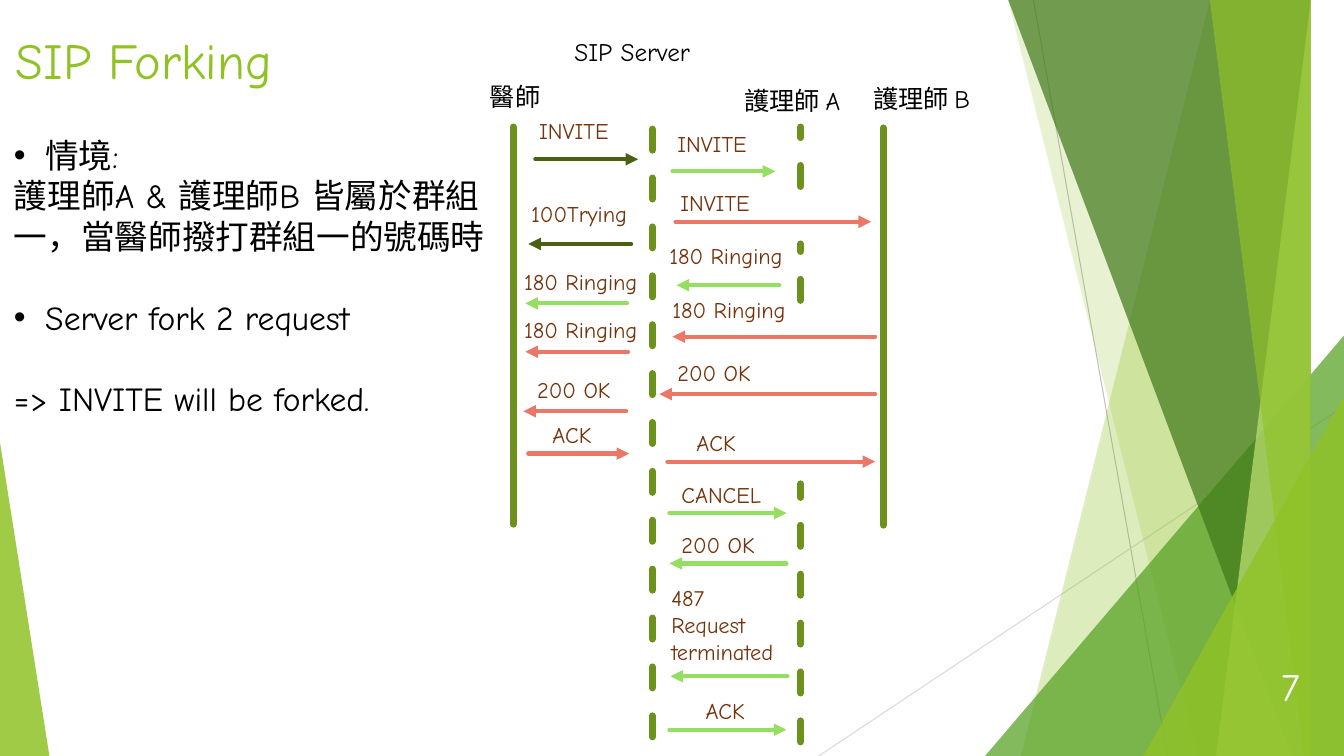
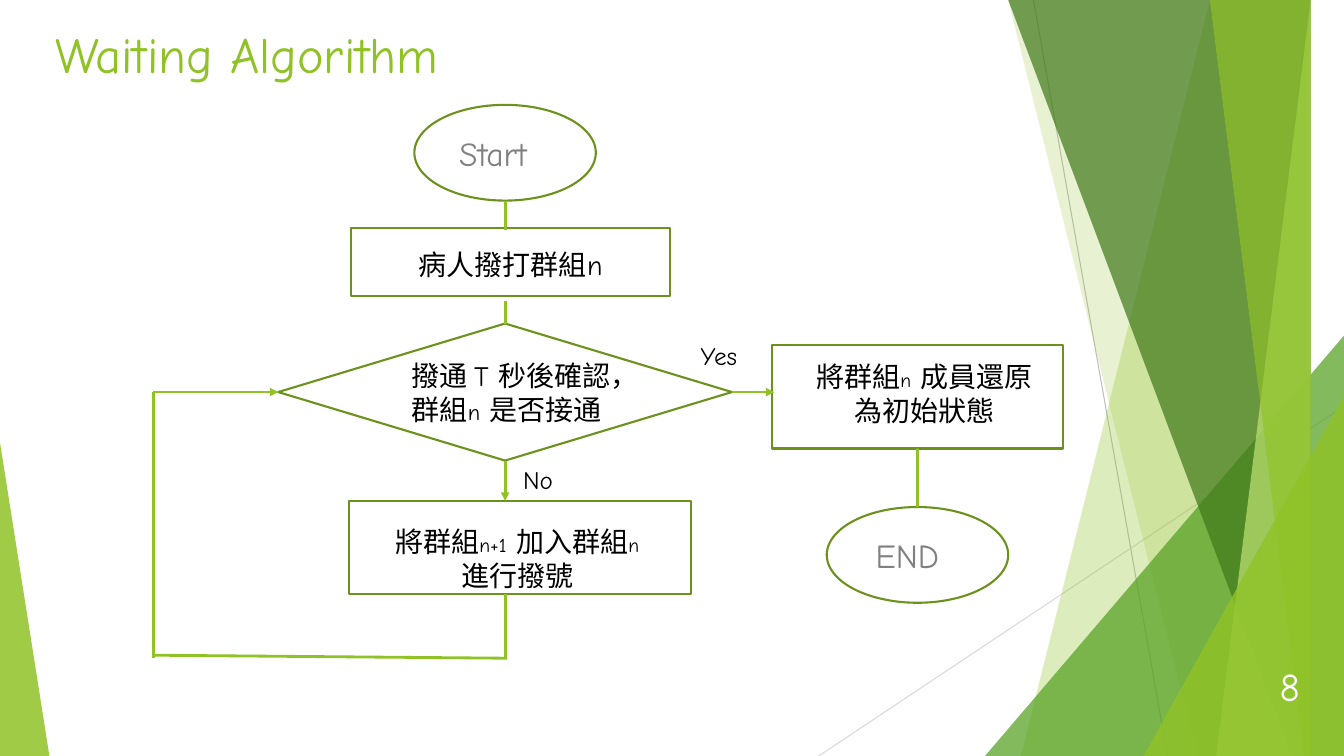
import pptx
import pptx.util
import pptx.dml.color
import pptx.enum.dml
import pptx.enum.shapes
import pptx.enum.text
import pptx.oxml.ns
import pptx.oxml.xmlchemy

Inches = pptx.util.Inches
Pt = pptx.util.Pt
RGBColor = pptx.dml.color.RGBColor
Shape = pptx.enum.shapes.MSO_SHAPE
Align = pptx.enum.text.PP_ALIGN
Anchor = pptx.enum.text.MSO_ANCHOR
qn = pptx.oxml.ns.qn
new_element = pptx.oxml.xmlchemy.OxmlElement

WIDTH, HEIGHT = 13.33, 7.5
FONT = "Comic Neue"
TOP, LEFT, BOTTOM, RIGHT = 0, 1, 2, 3

LIME = RGBColor(0x90, 0xC2, 0x26)
GREEN = RGBColor(0x54, 0xA0, 0x21)
FOREST = RGBColor(0x3F, 0x78, 0x19)
PALE = RGBColor(0xC0, 0xE4, 0x74)
OLIVE = RGBColor(0x6C, 0x92, 0x1D)
DARK_OLIVE = RGBColor(0x48, 0x61, 0x13)
BRIGHT = RGBColor(0x94, 0xDE, 0x61)
CORAL = RGBColor(0xEB, 0x77, 0x66)
BROWN = RGBColor(0x74, 0x33, 0x0C)
GREY = RGBColor(0x80, 0x80, 0x80)
SILVER = RGBColor(0xBF, 0xBF, 0xBF)
MIST = RGBColor(0xD9, 0xD9, 0xD9)
BLACK = RGBColor(0, 0, 0)
WHITE = RGBColor(255, 255, 255)

# Shared backdrop: thin lines, then bands (upper x, lower x) and triangles (x, y, width, apex)
THIN_LINES = [((10.25, 0), (11.58, HEIGHT), SILVER), ((WIDTH, 4.03), (8.12, HEIGHT), MIST)]
BACKDROP = [
    ("band", (12.28, 10.04), LIME, 30),
    ("band", (10.5, 11.83), LIME, 20),
    ("triangle", (9.77, 3.33, 3.56, 1), GREEN, 72),
    ("band", (10.21, 12.91), FOREST, 70),
    ("band", (13.03, 11.92), PALE, 70),
    ("band", (11.96, 13.18), LIME, 65),
    ("triangle", (11.34, 3.93, 1.99, 1), LIME, 80),
    ("triangle", (0, 4.39, 0.49, 0), LIME, 85),
]

# Sequence chart: lifelines (x, top, bottom, dashed), names (text, centre, top)
LIFELINES = [
    (5.09, 1.26, 5.2, False), (6.47, 1.21, 7.31, True), (8.76, 1.27, 5.21, False),
    (7.94, 1.26, 1.85, True), (7.94, 2.42, 2.98, True), (7.94, 4.8, 7.36, True),
]
NAMES = [("SIP Server", 6.27, 0.31), ("護理師 A", 7.86, 0.8),
         ("醫師", 5.11, 0.76), ("護理師 B", 9.14, 0.78)]

# Messages: text, label left, label rise above the arrow, from x, to x, arrow y, colour
MESSAGES = [
    ("INVITE", 5.25, 0.47, 5.31, 6.33, 1.58, DARK_OLIVE),
    ("INVITE", 6.62, 0.46, 6.67, 7.69, 1.7, BRIGHT),
    ("INVITE", 6.65, 0.37, 6.7, 8.64, 2.2, CORAL),
    ("100Trying", 5.17, 0.48, 6.26, 5.24, 2.42, DARK_OLIVE),
    ("180 Ringing", 6.54, 0.48, 7.73, 6.71, 2.83, BRIGHT),
    ("180 Ringing", 5.1, 0.4, 6.22, 5.21, 3.01, BRIGHT),
    ("180 Ringing", 6.57, 0.45, 8.68, 6.67, 3.34, CORAL),
    ("180 Ringing", 5.1, 0.4, 6.23, 5.21, 3.49, CORAL),
    ("200 OK", 6.62, 0.4, 8.68, 6.54, 3.91, CORAL),
    ("200 OK", 5.23, 0.4, 6.21, 5.19, 4.08, CORAL),
    ("ACK", 5.38, 0.37, 5.24, 6.24, 4.5, CORAL),
    ("ACK", 6.81, 0.37, 6.62, 8.68, 4.58, CORAL),
    ("CANCEL", 6.66, 0.37, 6.64, 7.8, 5.09, BRIGHT),
    ("200 OK", 6.66, 0.37, 7.8, 6.64, 5.59, BRIGHT),
    ("487\nRequest\nterminated", 6.56, 0.96, 7.81, 6.65, 6.71, BRIGHT),
    ("ACK", 6.9, 0.37, 6.64, 7.8, 7.24, BRIGHT),
]

# Scenario text: words, bulleted, space before in points
SCENARIO = [
    ("情境:", True, 0),
    ("護理師A & 護理師B 皆屬於群組一，當醫師撥打群組一的號碼時", False, 0),
    ("Server fork 2 request", True, 29),
    ("=> INVITE will be forked.", False, 29),
]

# Flow chart: kind, box, text margins (left, top, right, bottom), colour, lines of (text, size)
NODES = {
    "start": (Shape.OVAL, (4.11, 1.04, 1.8, 0.95), (0, 0, 0.24, 0), GREY, [[("Start", 24)]]),
    "call": (Shape.RECTANGLE, (3.48, 2.26, 3.17, 0.68), (0.1, 0.05, 0.1, 0), BLACK,
             [[("病人撥打群組n", 20)]]),
    "check": (Shape.DIAMOND, (2.76, 3.21, 4.5, 1.36), (0.2, 0, 0, 0), BLACK,
              [[("撥通 T 秒後確認，", 20)], [("群組", 20), ("n", 16), (" 是否接通", 20)]]),
    "reset": (Shape.RECTANGLE, (7.66, 3.42, 2.88, 1.03), (0.31, 0, 0.17, 0.07), BLACK,
              [[("將群組", 20), ("n", 14), (" 成員還原為初始狀態", 20)]]),
    "end": (Shape.OVAL, (8.2, 5.03, 1.8, 0.95), (0, 0, 0.2, 0), GREY, [[("END", 24)]]),
    "join": (Shape.RECTANGLE, (3.46, 4.97, 3.39, 0.92), (0.36, 0.22, 0.41, 0), BLACK,
             [[("將群組", 20), ("n+1", 14), (" 加入群組", 20), ("n", 14), (" 進行撥號", 20)]]),
}
# Links: from, to, arrow, joined start, joined end
LINKS = [
    ((5.01, 1.99), (5.01, 2.28), False, None, None),
    ((5.01, 2.99), (5.01, 3.21), False, None, ("check", TOP)),
    ((9.1, 4.45), (9.1, 5.03), False, ("reset", BOTTOM), ("end", TOP)),
    ((5.01, 5.89), (5.01, 6.53), False, None, None),
    ((5.03, 6.53), (1.52, 6.5), False, None, None),
    ((1.52, 6.53), (1.52, 3.89), False, None, None),
    ((1.52, 3.89), (2.76, 3.89), True, None, ("check", LEFT)),
    ((7.26, 3.89), (7.68, 3.89), True, ("check", RIGHT), None),
    ((5.01, 4.57), (5.01, 4.97), True, ("check", BOTTOM), None),
]
ANSWERS = [("No", 5.09, 4.56), ("Yes", 6.85, 3.33)]


def add_span(para, words, size, colour):
    span = para.add_run()
    span.text = words
    span.font.name = FONT
    span.font.size = Pt(size)
    span.font.color.rgb = colour


def fill_frame(frame, lines, colour, align):
    """Write lines, each a list of (text, size), into a text frame."""
    for index, line in enumerate(lines):
        para = frame.paragraphs[0] if index == 0 else frame.add_paragraph()
        para.alignment = align
        for words, size in line:
            add_span(para, words, size, colour)


def add_text(page, left, top, width, height, words, size, colour, align=Align.LEFT):
    box = page.shapes.add_textbox(*map(Inches, (left, top, width, height)))
    box.text_frame.word_wrap = True
    fill_frame(box.text_frame, [[(line, size)] for line in words.split("\n")], colour, align)
    return box


def add_line(page, start, end, colour, width, arrow=False, dashed=False, round_cap=False):
    line = page.shapes.add_connector(
        pptx.enum.shapes.MSO_CONNECTOR.STRAIGHT, *map(Inches, start + end))
    line.line.color.rgb = colour
    line.line.width = Pt(width)
    if dashed:
        line.line.dash_style = pptx.enum.dml.MSO_LINE.DASH
    properties = line._element.spPr
    outline = properties.find(qn("a:ln"))
    if round_cap:
        outline.set("cap", "rnd")
    if arrow:
        head = new_element("a:tailEnd")
        head.set("type", "triangle")
        outline.append(head)
    properties.append(new_element("a:effectLst"))
    return line


def paint(shape, colour, opacity):
    shape.shadow.inherit = False
    shape.line.fill.background()
    shape.fill.solid()
    shape.fill.fore_color.rgb = colour
    alpha = new_element("a:alpha")
    alpha.set("val", str(opacity * 1000))
    shape._element.spPr.find(qn("a:solidFill"))[0].append(alpha)


def add_page(deck, title, left, top, number):
    """Blank page with the backdrop, a title and its number."""
    page = deck.slides.add_slide(deck.slide_layouts[6])
    for start, end, colour in THIN_LINES:
        add_line(page, start, end, colour, 0.75)
    for kind, place, colour, opacity in BACKDROP:
        if kind == "band":
            upper, lower = place
            builder = page.shapes.build_freeform(upper, 0, scale=Inches(1))
            builder.add_line_segments([(WIDTH, 0), (WIDTH, HEIGHT), (lower, HEIGHT)])
            shape = builder.convert_to_shape()
        else:
            x, y, width, apex = place
            shape = page.shapes.add_shape(
                Shape.ISOSCELES_TRIANGLE, *map(Inches, (x, y, width, HEIGHT - y)))
            shape.adjustments[0] = apex
        paint(shape, colour, opacity)
    add_text(page, left, top, 6.72, 0.8, title, 36, LIME)
    box = add_text(page, 11.66, 6.36, 1.33, 0.89, str(number), 28, WHITE, Align.RIGHT)
    box.text_frame.vertical_anchor = Anchor.MIDDLE
    return page


def add_scenario(page):
    box = page.shapes.add_textbox(*map(Inches, (0.04, 1.29, 4.98, 3.23)))
    frame = box.text_frame
    frame.word_wrap = True
    for index, (words, bulleted, gap) in enumerate(SCENARIO):
        para = frame.paragraphs[0] if index == 0 else frame.add_paragraph()
        para.space_before = Pt(gap)
        add_span(para, words, 24, BLACK)
        if bulleted:
            properties = para._p.get_or_add_pPr()
            properties.set("marL", str(Inches(0.31)))
            properties.set("indent", str(-Inches(0.31)))
            for tag, key, value in (("a:buFont", "typeface", "Arial"), ("a:buChar", "char", "•")):
                mark = new_element(tag)
                mark.set(key, value)
                properties.append(mark)


def build_forking(deck):
    page = add_page(deck, "SIP Forking", 0.06, 0.24, 7)
    for x, top, bottom, dashed in LIFELINES:
        # dashes run upwards from the foot of each lifeline
        add_line(page, (x, bottom), (x, top), OLIVE, 5, dashed=dashed, round_cap=True)
    for words, centre, top in NAMES:
        add_text(page, centre - 0.85, top, 1.7, 0.4, words, 18, BLACK, Align.CENTER)
    for words, left, rise, start, end, y, colour in MESSAGES:
        add_line(page, (start, y), (end, y), colour, 3, arrow=True, round_cap=True)
        add_text(page, left, y - rise, 1.53, 0.37, words, 16, BROWN)
    add_scenario(page)


def add_node(page, kind, place, margins, colour, lines):
    node = page.shapes.add_shape(kind, *map(Inches, place))
    node.shadow.inherit = False
    node.fill.solid()
    node.fill.fore_color.rgb = WHITE
    node.line.color.rgb = OLIVE
    node.line.width = Pt(1.5)
    frame = node.text_frame
    frame.margin_left, frame.margin_top, frame.margin_right, frame.margin_bottom = map(
        Inches, margins)
    frame.vertical_anchor = Anchor.MIDDLE
    is_check = kind == Shape.DIAMOND
    frame.word_wrap = not is_check
    fill_frame(frame, lines, colour, Align.LEFT if is_check else Align.CENTER)
    return node


def build_waiting(deck):
    page = add_page(deck, "Waiting Algorithm", 0.45, 0.18, 8)
    nodes = {name: add_node(page, *node) for name, node in NODES.items()}
    for start, end, arrow, begin_at, end_at in LINKS:
        link = add_line(page, start, end, LIME, 2, arrow)
        if begin_at:
            link.begin_connect(nodes[begin_at[0]], begin_at[1])
        if end_at:
            link.end_connect(nodes[end_at[0]], end_at[1])
    for words, left, top in ANSWERS:
        add_text(page, left, top, 0.68, 0.4, words, 18, BLACK)


def main():
    deck = pptx.Presentation()
    deck.slide_width, deck.slide_height = Inches(WIDTH), Inches(HEIGHT)
    build_forking(deck)
    build_waiting(deck)
    deck.save("out.pptx")


if __name__ == "__main__":
    main()
